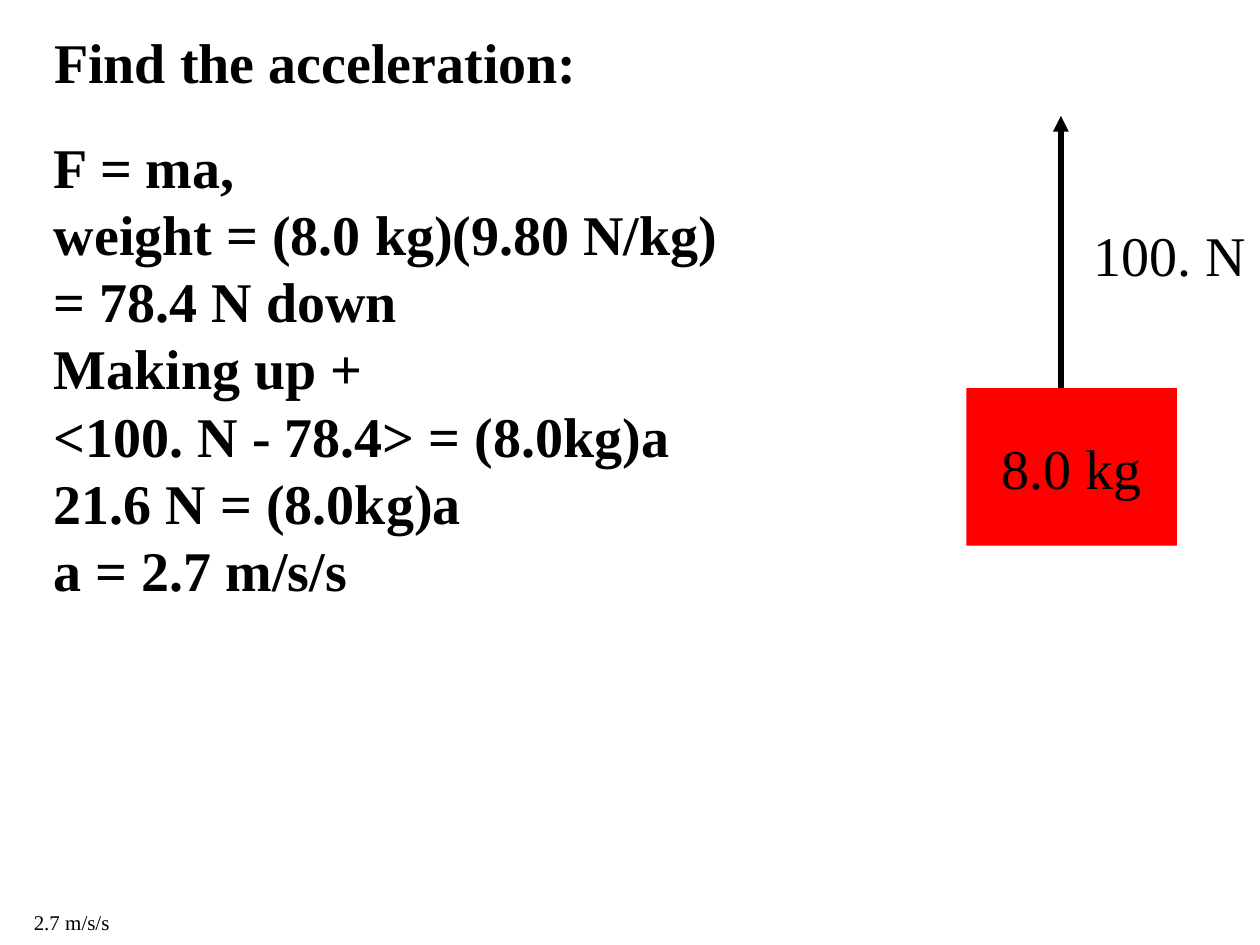
from lxml import etree
from pptx import Presentation
from pptx.dml.color import RGBColor
from pptx.enum.shapes import MSO_CONNECTOR, MSO_SHAPE
from pptx.enum.text import MSO_ANCHOR, MSO_AUTO_SIZE, PP_ALIGN
from pptx.oxml.ns import qn
from pptx.util import Inches, Pt

RECTANGLE = MSO_SHAPE.RECTANGLE
STRAIGHT = MSO_CONNECTOR.STRAIGHT
TOP, MIDDLE = MSO_ANCHOR.TOP, MSO_ANCHOR.MIDDLE
NO_FIT = MSO_AUTO_SIZE.NONE
LEFT, CENTER = PP_ALIGN.LEFT, PP_ALIGN.CENTER
TITLE_ONLY = 5

FONT = "Times New Roman"
BLACK, RED = "000000", "FF0000"
SOLUTION = [
    "F = ma,",
    "weight = (8.0 kg)(9.80 N/kg)",
    "= 78.4 N down",
    "Making up +",
    "<100. N - 78.4> = (8.0kg)a",
    "21.6 N = (8.0kg)a",
    "a = 2.7 m/s/s",
]


def color(hex_value):
    """Return the colour for a hex string."""
    return RGBColor.from_string(hex_value)


def apply(target, values):
    """Set each attribute named in a dict of format values."""
    for name, value in values.items():
        setattr(target, name, value)


def write(holder, lines, size=32, bold=False, wrap=True, align=LEFT, anchor=TOP):
    """Write lines as formatted paragraphs in a text holder."""
    frame = holder.text_frame
    frame.text = "\n".join(lines)
    apply(frame, {"word_wrap": wrap, "auto_size": NO_FIT, "vertical_anchor": anchor})
    for paragraph in frame.paragraphs:
        paragraph.alignment = align
        font = paragraph.runs[0].font
        apply(font, {"name": FONT, "size": Pt(size), "bold": bold})
        font.color.rgb = color(BLACK)


def add_title(slide, title, left, top, width, height):
    """Place and format the title placeholder."""
    heading = slide.shapes.title
    apply(heading, {"left": Inches(left), "top": Inches(top),
                    "width": Inches(width), "height": Inches(height)})
    write(heading, [title], bold=True)


def add_text(slide, lines, left, top, width, height, **style):
    """Add a text box holding the given lines."""
    box = slide.shapes.add_textbox(*map(Inches, (left, top, width, height)))
    write(box, lines, **style)


def add_block(slide, label, left, top, width, height):
    """Add the labelled red mass."""
    block = slide.shapes.add_shape(RECTANGLE, *map(Inches, (left, top, width, height)))
    block.shadow.inherit = False
    block.fill.solid()
    block.fill.fore_color.rgb = color(RED)
    block.line.fill.background()
    write(block, [label], wrap=False, align=CENTER, anchor=MIDDLE)


def add_force(slide, x, start, end):
    """Add a vertical force arrow pointing at its end."""
    force = slide.shapes.add_connector(STRAIGHT, *map(Inches, (x, start, x, end)))
    force.line.width = Pt(3)
    force.line.color.rgb = color(BLACK)
    etree.SubElement(force.line._get_or_add_ln(), qn("a:tailEnd"), type="triangle")
    etree.SubElement(force._element.spPr, qn("a:effectLst"))


def main():
    """Build the acceleration problem slide."""
    deck = Presentation()
    apply(deck, {"slide_width": Inches(10), "slide_height": Inches(7.5)})
    slide = deck.slides.add_slide(deck.slide_layouts[TITLE_ONLY])
    add_title(slide, "Find the acceleration:", 0.33, 0.17, 9.08, 0.63)
    add_text(slide, ["2.7 m/s/s"], 0.17, 7.17, 0.8, 0.3, size=12, wrap=False)
    add_block(slide, "8.0 kg", 7.67, 3.08, 1.67, 1.25)
    add_text(slide, ["100. N"], 8.58, 1.7, 1.41, 0.63, wrap=False)
    add_text(slide, SOLUTION, 0.33, 1, 6.83, 3.83, bold=True)
    add_force(slide, 8.42, 3.08, 0.92)
    deck.save("out.pptx")


if __name__ == "__main__":
    main()
